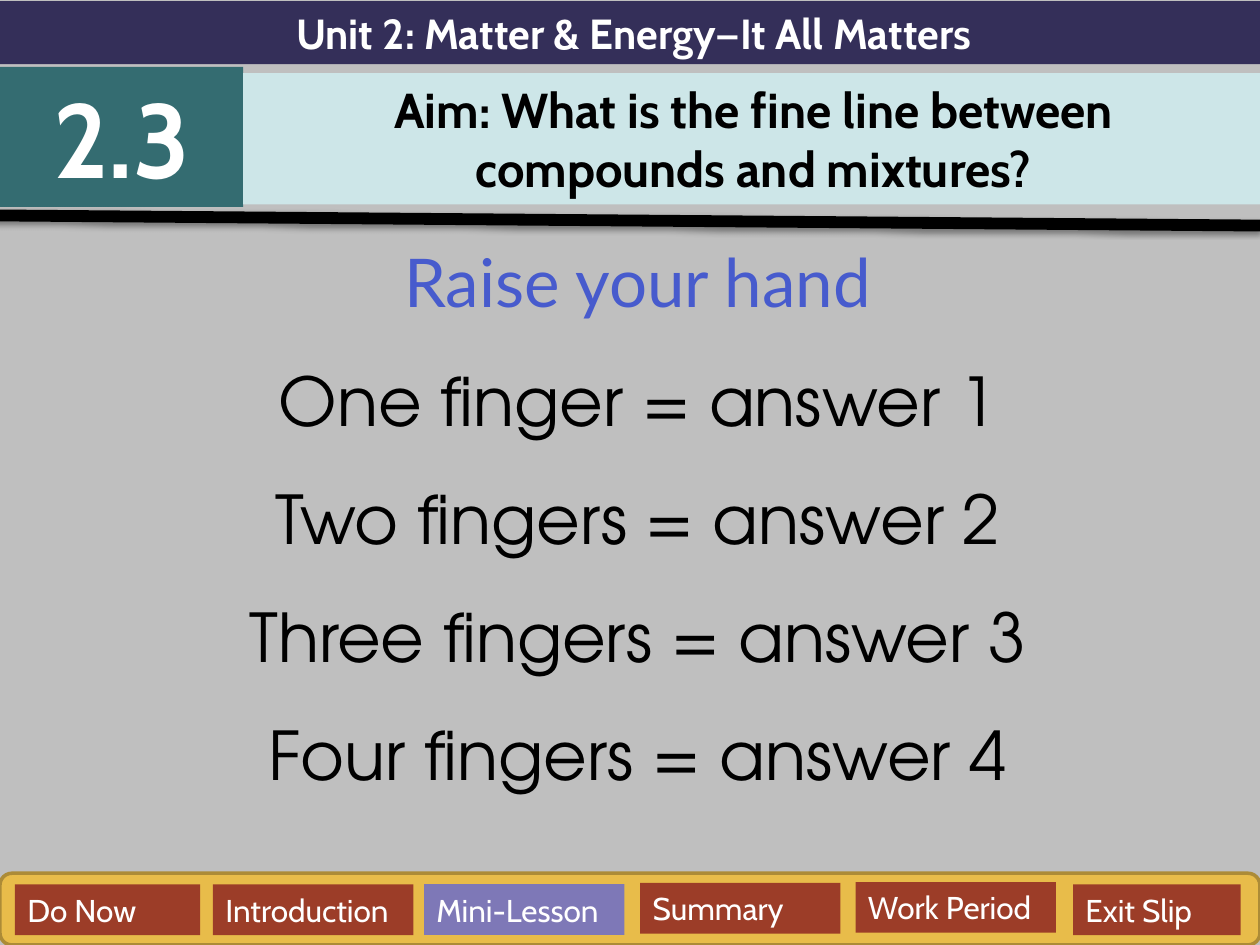
import pptx
import pptx.util
import pptx.dml.color
import pptx.enum.shapes
import pptx.enum.text
import pptx.oxml
import pptx.oxml.ns

Pt = pptx.util.Pt
SHAPE = pptx.enum.shapes.MSO_SHAPE
ALIGN = pptx.enum.text.PP_ALIGN
ANCHOR = pptx.enum.text.MSO_ANCHOR

COLORS = {
    "background": "BFBFBF", "banner": "342F59", "number": "346C71",
    "aim": "CDE6E8", "bar": "E8BC4A", "bar_line": "AC8B37",
    "tab": "9C3D28", "current_tab": "7E78B7", "heading": "475BCD",
    "white": "FFFFFF", "black": "000000",
}

HEADERS = [
    (["Unit 2: Matter & Energy—It All Matters"], (0, 0.7, 724.3, 36), "banner", 24, "white"),
    (["2.3"], (0, 38.2, 139, 80), "number", 60, "white"),
    (["Aim: What is the fine line between", "compounds and mixtures?"],
     (139, 41.8, 583.2, 75), "aim", 28, "black"),
]

TABS = [
    ("Do Now", 8.6, 505.4, 105.8),
    ("Introduction", 121.7, 505.4, 114.5),
    ("Mini-Lesson", 242.3, 505.2, 114.5),
    ("Summary", 365.8, 504.5, 114.5),
    ("Work Period", 488.9, 504, 114.5),
    ("Exit Slip", 613.2, 505.4, 95.8),
]
CURRENT_TAB = "Mini-Lesson"
TAB_HEIGHT = 29

LINES = [
    ("Raise your hand", "Lato", "heading"),
    ("One finger = answer 1", "TeX Gyre Adventor", "black"),
    ("Two fingers = answer 2", "TeX Gyre Adventor", "black"),
    ("Three fingers = answer 3", "TeX Gyre Adventor", "black"),
    ("Four fingers = answer 4", "TeX Gyre Adventor", "black"),
]
LINE_SIZE = 38.4

SHADOW = (
    '<a:effectLst xmlns:a="http://schemas.openxmlformats.org/drawingml/2006/main">'
    '<a:outerShdw blurRad="39370" dist="20320" dir="5400000" rotWithShape="0">'
    '<a:srgbClr val="000000"><a:alpha val="38000"/></a:srgbClr>'
    '</a:outerShdw></a:effectLst>'
)


def rgb(name):
    return pptx.dml.color.RGBColor.from_string(COLORS[name])


def add_box(slide, kind, box, fill):
    sp = slide.shapes.add_shape(kind, *(Pt(v) for v in box))
    sp.shadow.inherit = False
    sp.fill.solid()
    sp.fill.fore_color.rgb = rgb(fill)
    sp.line.fill.background()
    return sp


def format_paragraph(p, font, size, color, align, bold=False):
    p.alignment = align
    for r in p.runs:
        r.font.name = font
        r.font.size = Pt(size)
        r.font.bold = bold
        r.font.color.rgb = rgb(color)


def add_label(slide, texts, box, fill, size, color, align, bold=False):
    sp = add_box(slide, SHAPE.RECTANGLE, box, fill)
    tf = sp.text_frame
    tf.word_wrap = True
    tf.vertical_anchor = ANCHOR.MIDDLE
    tf.text = "\n".join(texts)
    for p in tf.paragraphs:
        format_paragraph(p, "Cabin", size, color, align, bold)


def add_divider(slide):
    line = slide.shapes.add_connector(
        pptx.enum.shapes.MSO_CONNECTOR.STRAIGHT, Pt(-3.6), Pt(123.1), Pt(720), Pt(128.9))
    line.line.color.rgb = rgb("black")
    line.line.width = Pt(6.75)
    line._element.spPr.append(pptx.oxml.parse_xml(SHADOW))


def add_tabs(slide):
    bar = add_box(slide, SHAPE.ROUNDED_RECTANGLE, (0, 499, 720, 41), "bar")
    bar.line.color.rgb = rgb("bar_line")
    bar.line.width = Pt(2)
    for name, left, top, width in TABS:
        fill = "current_tab" if name == CURRENT_TAB else "tab"
        add_label(slide, [name], (left, top, width, TAB_HEIGHT), fill, 18, "white", ALIGN.LEFT)


def add_body(slide):
    tf = slide.shapes.add_textbox(Pt(8.6), Pt(120.2), Pt(711.4), Pt(393.1)).text_frame
    tf.word_wrap = True
    tf.text = "\n".join(text for text, font, color in LINES)
    for p, (text, font, color) in zip(tf.paragraphs, LINES):
        format_paragraph(p, font, LINE_SIZE, color, ALIGN.CENTER)
        p.line_spacing = 1.3
        p.space_before = Pt(LINE_SIZE * 0.2)


def main():
    prs = pptx.Presentation()
    prs.slide_width, prs.slide_height = Pt(720), Pt(540)
    slide = prs.slides.add_slide(prs.slide_layouts[6])
    slide.background.fill.solid()
    slide.background.fill.fore_color.rgb = rgb("background")
    for texts, box, fill, size, color in HEADERS:
        add_label(slide, texts, box, fill, size, color, ALIGN.CENTER, bold=True)
    add_divider(slide)
    add_tabs(slide)
    add_body(slide)
    prs.save("out.pptx")


if __name__ == "__main__":
    main()
